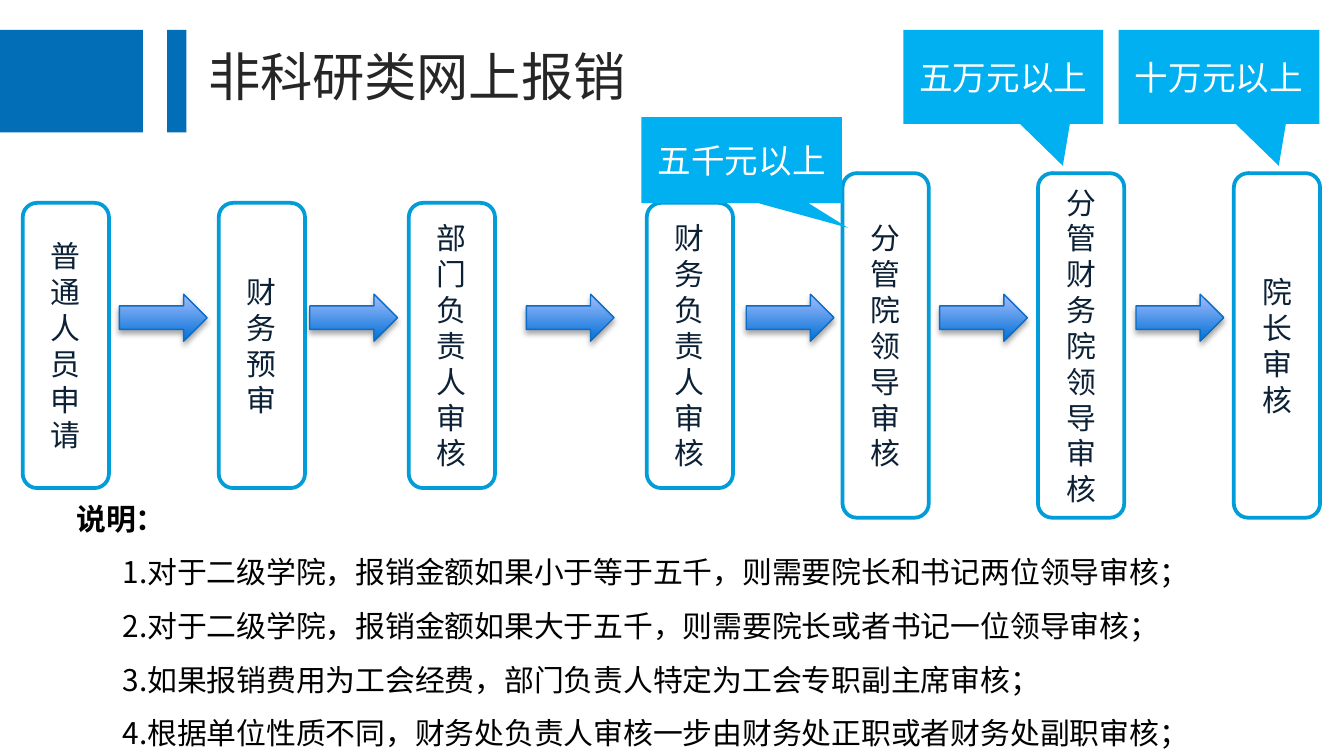
from lxml.etree import SubElement
from pptx import Presentation
from pptx.dml.color import RGBColor
from pptx.enum.shapes import MSO_SHAPE
from pptx.enum.text import MSO_ANCHOR, PP_ALIGN
from pptx.oxml.ns import qn
from pptx.util import Pt

SANS = "Noto Sans CJK SC"
SPARTAN = "League Spartan"
TITLE = "非科研类网上报销"
NOTES = [
    "说明：",
    "1.对于二级学院，报销金额如果小于等于五千，则需要院长和书记两位领导审核；",
    "2.对于二级学院，报销金额如果大于五千，则需要院长或者书记一位领导审核；",
    "3.如果报销费用为工会经费，部门负责人特定为工会专职副主席审核；",
    "4.根据单位性质不同，财务处负责人审核一步由财务处正职或者财务处副职审核；",
]
# Left edge, height and label of each step
STEPS = [
    (12.2, 152.8, "普通人员申请"),
    (117.2, 152.8, "财务预审"),
    (219, 152.8, "部门负责人审核"),
    (346.5, 152.8, "财务负责人审核"),
    (451.4, 184.6, "分管院领导审核"),
    (556.1, 184.6, "分管财务院领导审核"),
    (661, 184.6, "院长审核"),
]
ARROWS = [64, 166, 282, 399.8, 503.4, 608.6]
# Left, top, width, height, pointer x and y, label
CALLOUTS = [
    (484, 16, 107, 50.4, 0.298, 0.946, "五万元以上"),
    (343.6, 62.8, 107.5, 46.1, 0.53, 0.786, "五千元以上"),
    (599.3, 16, 107.5, 50.4, 0.298, 0.946, "十万元以上"),
]
MID = 170.2  # centre line of the flow


def rgb(code):
    return RGBColor.from_string(code)


def style(para, size, font, color, bold=False):
    for run in para.runs:
        run.font.size = Pt(size)
        run.font.name = font
        run.font.bold = bold
        run.font.color.rgb = rgb(color)
        east = SubElement(run.font._element, qn("a:ea"))
        east.set("typeface", font)


def add_shape(slide, kind, box, fill=None, line=None, width=0.75):
    shape = slide.shapes.add_shape(kind, *[Pt(v) for v in box])
    shape.shadow.inherit = False
    if fill:
        shape.fill.solid()
        shape.fill.fore_color.rgb = rgb(fill)
    if line:
        shape.line.color.rgb = rgb(line)
        shape.line.width = Pt(width)
    else:
        shape.line.fill.background()
    return shape


def label(shape, text, size, font, color):
    frame = shape.text_frame
    frame.text = text
    frame.word_wrap = True
    frame.vertical_anchor = MSO_ANCHOR.MIDDLE
    para = frame.paragraphs[0]
    para.alignment = PP_ALIGN.CENTER
    style(para, size, font, color)


def add_text(slide, box):
    frame = slide.shapes.add_textbox(*[Pt(v) for v in box]).text_frame
    frame.word_wrap = True
    return frame


def add_step(slide, left, high, text):
    box = (left, MID + 14.9 - high / 2, 46.2, high)
    shape = add_shape(slide, MSO_SHAPE.ROUNDED_RECTANGLE, box,
                      "FFFFFF", "009DD9", 2)
    label(shape, text, 16, SPARTAN, "0C2036")


def add_arrow(slide, left):
    box = (left, MID - 12.6, 47, 25.2)
    shape = add_shape(slide, MSO_SHAPE.RIGHT_ARROW, box, line="0A6DC6")
    shape.fill.gradient()
    shape.fill.gradient_angle = 90
    for stop, code in zip(shape.fill.gradient_stops, ("0070D5", "A3BDFF")):
        stop.color.rgb = rgb(code)
    # Soft shadow straight below
    effects = shape._element.spPr.find(qn("a:effectLst"))
    shade = SubElement(effects, qn("a:outerShdw"), blurRad=str(Pt(3.1)),
                       dist=str(Pt(1.8)), dir="5400000", rotWithShape="0")
    black = SubElement(shade, qn("a:srgbClr"), val="000000")
    SubElement(black, qn("a:alpha"), val="35000")


def add_callout(slide, left, top, wide, high, tip_x, tip_y, text):
    shape = add_shape(slide, MSO_SHAPE.RECTANGULAR_CALLOUT,
                      (left, top, wide, high), "00B0F0")
    shape.adjustments[0] = tip_x
    shape.adjustments[1] = tip_y
    label(shape, text, 18, SANS, "FFFFFF")


def add_notes(slide):
    frame = add_text(slide, (33.8, 254.9, 711.4, 152.6))
    frame.text = "\n".join(NOTES)
    for i, para in enumerate(frame.paragraphs):
        para.line_spacing = 1.5
        style(para, 16, SANS, "000000", bold=i == 0)
        if i:
            para._p.get_or_add_pPr().set("marL", str(Pt(24.8)))


def main():
    deck = Presentation()
    deck.slide_width, deck.slide_height = Pt(720), Pt(405)
    slide = deck.slides.add_slide(deck.slide_layouts[6])

    # Title with its bars
    for left, wide in ((0, 76.5), (89.5, 10.4)):
        add_shape(slide, MSO_SHAPE.RECTANGLE, (left, 16, wide, 55), "036EB8")
    title = add_text(slide, (104.4, 20.2, 384.5, 41))
    title.text = TITLE
    style(title.paragraphs[0], 28, SANS, "262626")

    add_notes(slide)

    # Flow of steps, then the amounts above it
    for step in STEPS:
        add_step(slide, *step)
    for left in ARROWS:
        add_arrow(slide, left)
    for item in CALLOUTS:
        add_callout(slide, *item)

    deck.save("out.pptx")


if __name__ == "__main__":
    main()
